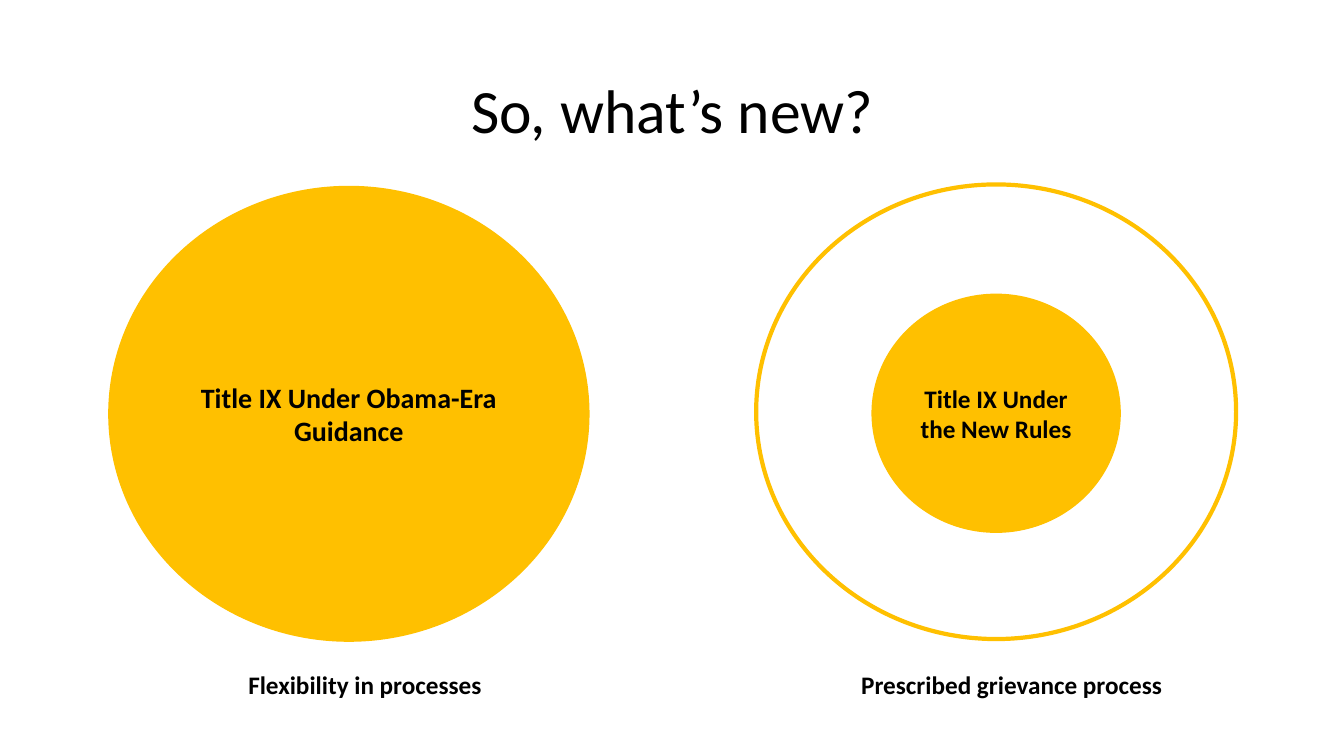
"""Build the slide that contrasts the two Title IX regimes."""
from dataclasses import dataclass
from typing import Optional

from pptx import Presentation
from pptx.dml.color import RGBColor
from pptx.enum.shapes import MSO_SHAPE
from pptx.enum.text import MSO_ANCHOR, MSO_AUTO_SIZE, PP_ALIGN
from pptx.util import Inches, Pt


@dataclass(frozen=True)
class Theme:
    """Colours and type sizes of the slide."""
    font: str = "Calibri"
    ink: RGBColor = RGBColor(0x00, 0x00, 0x00)
    gold: RGBColor = RGBColor(0xFF, 0xC0, 0x00)
    title: int = 44
    large: int = 20
    body: int = 18


@dataclass(frozen=True)
class Box:
    """A place in percent of the slide's width and height."""
    left: float
    top: float
    width: float
    height: float


@dataclass(frozen=True)
class Circle:
    """A disc with a label, or an empty ring."""
    box: Box
    line: float
    label: Optional[str] = None
    size: int = 0


@dataclass(frozen=True)
class Caption:
    """A line of text below a circle."""
    box: Box
    text: str


THEME = Theme()
WIDTH, HEIGHT = Inches(13.33), Inches(7.5)
TITLE_BOX = Box(6.9, 5.33, 86.27, 19.33)
BIG_W, BIG_H = 35.71, 60.13
CAPTION_TOP, CAPTION_H = 87.87, 5.33

CIRCLES = [
    Circle(Box(8.1, 24.67, BIG_W, BIG_H), 1, "Title IX Under Obama-Era Guidance", THEME.large),
    Circle(Box(56.26, 24.4, BIG_W, BIG_H), 3),
    Circle(Box(64.89, 38.93, 18.45, 31.47), 1, "Title IX Under the New Rules", THEME.body),
]
CAPTIONS = [
    Caption(Box(9.53, CAPTION_TOP, 35.26, CAPTION_H), "Flexibility in processes"),
    Caption(Box(60.09, CAPTION_TOP, 30.38, CAPTION_H), "Prescribed grievance process"),
]


def place(box: Box) -> dict[str, int]:
    """Turn percentages into lengths."""
    return {
        "left": round(WIDTH * box.left / 100),
        "top": round(HEIGHT * box.top / 100),
        "width": round(WIDTH * box.width / 100),
        "height": round(HEIGHT * box.height / 100),
    }


def apply(target, values: dict) -> None:
    """Set each attribute in a dict of values."""
    for name, value in values.items():
        setattr(target, name, value)


def write(sp, text: str, size: int, bold: bool, anchor: MSO_ANCHOR):
    """Write one centred paragraph and return it."""
    tf = sp.text_frame
    apply(tf, {"word_wrap": True, "auto_size": MSO_AUTO_SIZE.NONE, "vertical_anchor": anchor})
    p = tf.paragraphs[0]
    p.alignment = PP_ALIGN.CENTER
    r = p.add_run()
    r.text = text
    apply(r.font, {"name": THEME.font, "size": Pt(size), "bold": bold})
    r.font.color.rgb = THEME.ink
    return p


def draw_title(s, text: str) -> None:
    """Fill the title placeholder."""
    sp = s.shapes.title
    apply(sp, place(TITLE_BOX))
    p = write(sp, text, THEME.title, False, MSO_ANCHOR.MIDDLE)
    p.line_spacing = 0.9


def draw_circle(s, circle: Circle) -> None:
    """Draw a labelled disc or an empty ring."""
    sp = s.shapes.add_shape(MSO_SHAPE.FLOWCHART_CONNECTOR, **place(circle.box))
    sp.shadow.inherit = False
    sp.line.color.rgb = THEME.gold
    sp.line.width = Pt(circle.line)
    if circle.label is None:
        sp.fill.background()
        return
    sp.fill.solid()
    sp.fill.fore_color.rgb = THEME.gold
    write(sp, circle.label, circle.size, True, MSO_ANCHOR.MIDDLE)


def draw_caption(s, caption: Caption) -> None:
    """Draw a caption that grows with its text."""
    sp = s.shapes.add_textbox(**place(caption.box))
    write(sp, caption.text, THEME.body, True, MSO_ANCHOR.TOP)
    sp.text_frame.auto_size = MSO_AUTO_SIZE.SHAPE_TO_FIT_TEXT


def main() -> None:
    """Build and save the presentation."""
    prs = Presentation()
    apply(prs, {"slide_width": WIDTH, "slide_height": HEIGHT})
    s = prs.slides.add_slide(prs.slide_layouts.get_by_name("Title Only"))
    draw_title(s, "So, what’s new?")
    for circle in CIRCLES:
        draw_circle(s, circle)
    for caption in CAPTIONS:
        draw_caption(s, caption)
    prs.save("out.pptx")


if __name__ == "__main__":
    main()
